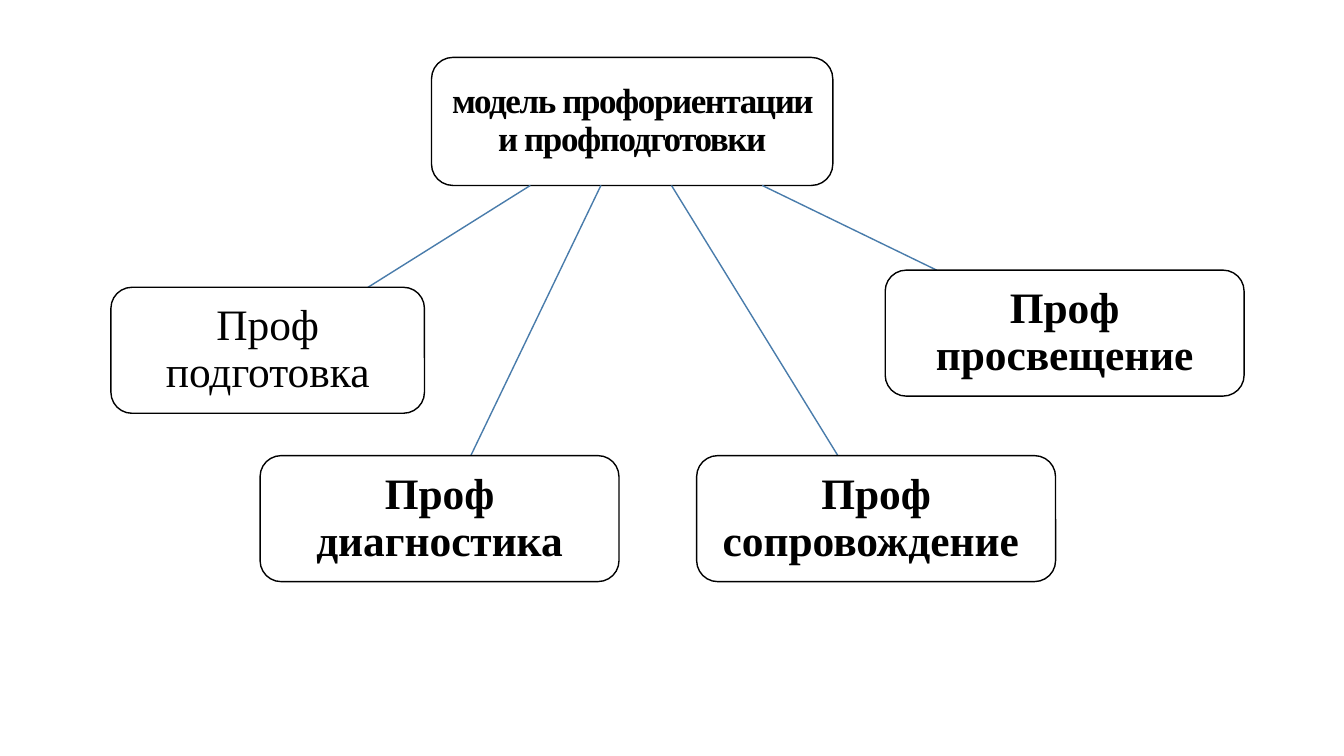
from pptx import Presentation
from pptx.dml.color import RGBColor
from pptx.enum.shapes import MSO_CONNECTOR, MSO_SHAPE
from pptx.enum.text import MSO_ANCHOR, PP_ALIGN
from pptx.oxml.ns import qn
from pptx.util import Inches, Pt
from lxml.etree import SubElement

COLORS = {"fill": "FFFFFF", "outline": "000000", "text": "000000", "link": "497CAB"}


class Diagram:
    font = "Times New Roman"
    line_width = Pt(1)

    def __init__(self, slide):
        self.s = slide

    def color(self, name):
        return RGBColor.from_string(COLORS[name])

    def box(self, text, left, top, width, height, size, bold=True, inset=0.15, spacing=None):
        sp = self.s.shapes.add_shape(
            MSO_SHAPE.ROUNDED_RECTANGLE, Inches(left), Inches(top), Inches(width), Inches(height)
        )
        sp.shadow.inherit = False
        sp.fill.solid()
        sp.fill.fore_color.rgb = self.color("fill")
        sp.line.color.rgb = self.color("outline")
        sp.line.width = self.line_width
        tf = sp.text_frame
        tf.word_wrap = True
        tf.vertical_anchor = MSO_ANCHOR.MIDDLE
        tf.margin_left = tf.margin_right = tf.margin_top = tf.margin_bottom = Inches(inset)
        p = tf.paragraphs[0]
        p.alignment = PP_ALIGN.CENTER
        p.line_spacing = 0.9
        r = p.add_run()
        r.text = text
        p.font.name = self.font
        p.font.size = Pt(size)
        p.font.bold = bold
        p.font.color.rgb = self.color("text")
        if spacing is not None:
            r.font._element.set("spc", str(spacing))

    def link(self, x1, y1, x2, y2):
        c = self.s.shapes.add_connector(
            MSO_CONNECTOR.STRAIGHT, Inches(x1), Inches(y1), Inches(x2), Inches(y2)
        )
        c.line.color.rgb = self.color("link")
        c.line.width = self.line_width
        SubElement(c._element.spPr, qn("a:effectLst"))


def main():
    prs = Presentation()
    prs.slide_width, prs.slide_height = Inches(13.33), Inches(7.5)
    d = Diagram(prs.slides.add_slide(prs.slide_layouts[6]))

    root_top, root_height = 0.57, 1.27
    d.box("модель профориентации и профподготовки", 4.28, root_top, 3.98, root_height,
          size=25, inset=0.13, spacing=-100)

    branches = [
        ("Проф диагностика", 2.58, 4.52, 3.56, True, 5.96, 4.67),
        ("Проф просвещение", 8.78, 2.68, 3.56, True, 7.56, 9.29),
        ("Проф сопровождение ", 6.91, 4.52, 3.56, True, 6.66, 8.31),
        ("Проф подготовка", 1.1, 2.85, 3.11, False, 5.26, 3.65),
    ]
    for text, left, top, width, bold, start_x, end_x in branches:
        d.link(start_x, root_top + root_height, end_x, top)
        d.box(text, left, top, width, 1.25, size=31, bold=bold)

    prs.save("out.pptx")


if __name__ == "__main__":
    main()
